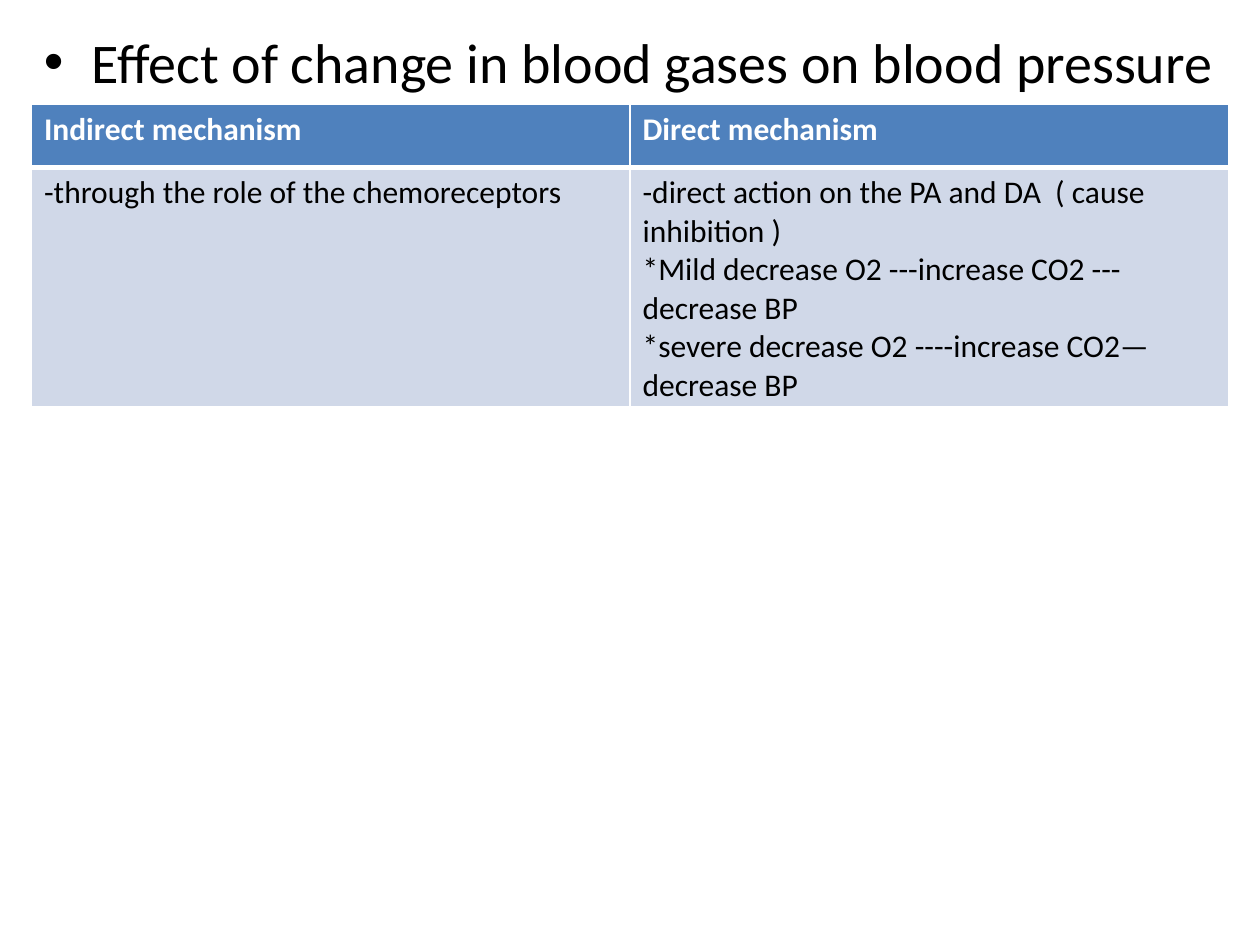
from pptx import Presentation
from pptx.dml.color import RGBColor
from pptx.oxml.ns import qn
from pptx.util import Inches, Pt
from lxml.etree import SubElement

FONT = "Calibri"
BLACK, WHITE = "000000", "FFFFFF"
HEADER_FILL, BODY_FILL = "4F81BD", "D0D8E8"

ROWS = [
    ["Indirect mechanism", "Direct mechanism"],
    [
        "-through the role of the chemoreceptors",
        "-direct action on the PA and DA  ( cause inhibition )\n"
        "*Mild decrease O2 ---increase CO2 ---decrease BP\n"
        "*severe decrease O2 ----increase CO2—decrease BP",
    ],
]
ROW_HEIGHTS = [0.5, 0.75]


def rgb(color):
    return RGBColor.from_string(color)


def format_text(tf, size, color, bold=False):
    for p in tf.paragraphs:
        for r in p.runs:
            r.font.name = FONT
            r.font.size = Pt(size)
            r.font.bold = bold
            r.font.color.rgb = rgb(color)


def add_bullet_text(s, text, left, top, width, height):
    tf = s.shapes.add_textbox(
        Inches(left), Inches(top), Inches(width), Inches(height)).text_frame
    tf.word_wrap = True
    p = tf.paragraphs[0]
    p.text = text
    p.space_before = Pt(6.4)
    format_text(tf, 32, BLACK)
    # Hanging bullet
    pPr = p._p.get_or_add_pPr()
    pPr.set("marL", str(Inches(0.38)))
    pPr.set("indent", str(-Inches(0.38)))
    SubElement(pPr, qn("a:buFont"), typeface="Arial")
    SubElement(pPr, qn("a:buChar"), char="•")


def set_borders(cell, color, **widths):
    tcPr = cell._tc.get_or_add_tcPr()
    for i, side in enumerate("LRTB"):
        ln = tcPr.makeelement(qn(f"a:ln{side}"), {"w": str(Pt(widths.get(side, 1)))})
        fill = SubElement(ln, qn("a:solidFill"))
        SubElement(fill, qn("a:srgbClr"), val=color)
        tcPr.insert(i, ln)  # borders come before the fill


def add_mechanism_table(s, left, top, width):
    table = s.shapes.add_table(
        len(ROWS), len(ROWS[0]), Inches(left), Inches(top),
        Inches(width), Inches(sum(ROW_HEIGHTS))).table
    for i, texts in enumerate(ROWS):
        header = i == 0
        table.rows[i].height = Inches(ROW_HEIGHTS[i])
        for j, text in enumerate(texts):
            cell = table.cell(i, j)
            cell.text_frame.text = text
            format_text(cell.text_frame, 18, WHITE if header else BLACK, header)
            cell.fill.solid()
            cell.fill.fore_color.rgb = rgb(HEADER_FILL if header else BODY_FILL)
            # Thick rule between header and body
            set_borders(cell, WHITE, **({"B": 3} if header else {"T": 3}))


def main():
    prs = Presentation()
    prs.slide_width, prs.slide_height = Inches(10), Inches(7.5)
    s = prs.slides.add_slide(prs.slide_layouts[6])

    # Heading
    add_bullet_text(s, "Effect of change in blood gases on blood pressure",
                    0.25, 0.17, 9.5, 7.17)

    # Comparison of mechanisms
    add_mechanism_table(s, 0.25, 0.83, 9.5)

    prs.save("out.pptx")


if __name__ == "__main__":
    main()
